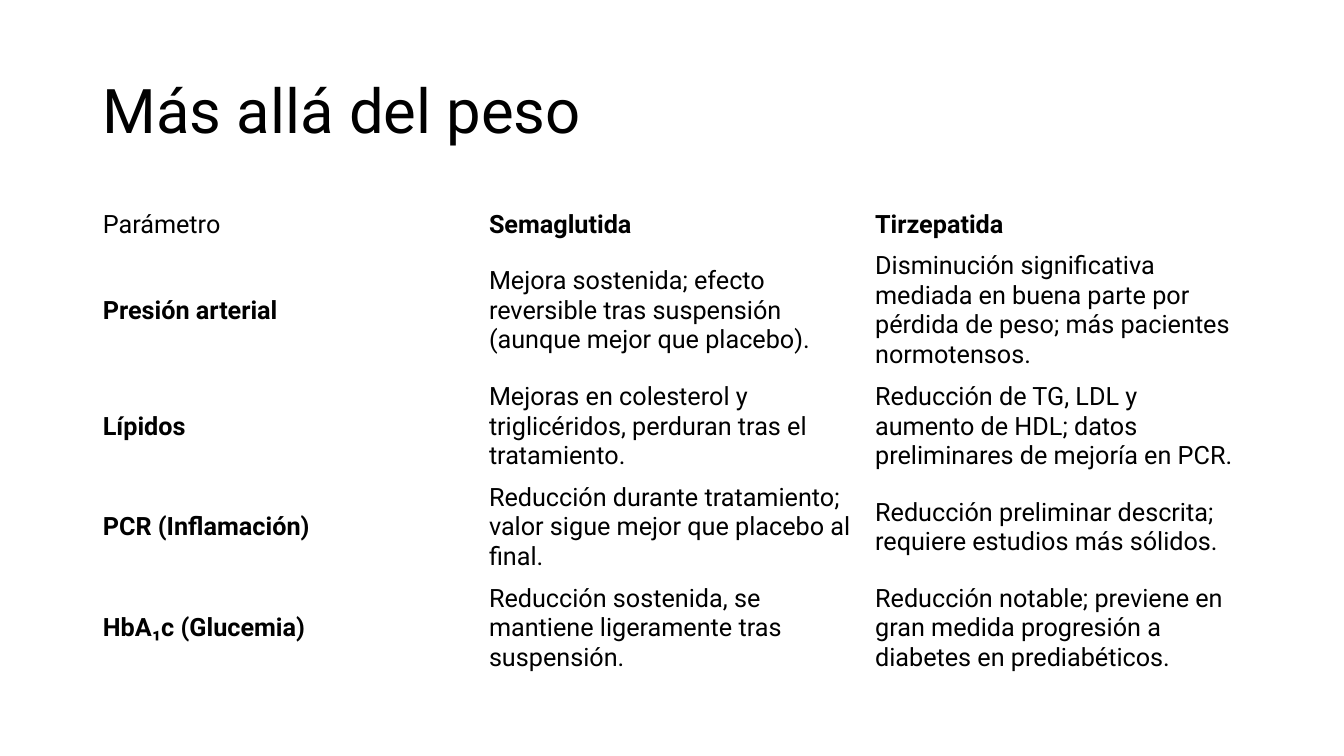
from dataclasses import dataclass

from pptx import Presentation, util as u
from pptx.dml.color import RGBColor
from pptx.enum import text


@dataclass(frozen=True)
class Theme:
    font: str = "Roboto"
    ink: RGBColor = RGBColor(0x00, 0x00, 0x00)
    paper: RGBColor = RGBColor(0xFF, 0xFF, 0xFF)
    title_size: int = 44
    table_size: int = 18
    plain_table: str = "{2D5ABB26-0587-4C30-8999-92F81FD0307C}"


class SlideBuilder:
    WIDTH, HEIGHT = 13.33, 7.5
    LEFT = 0.92
    COLUMN = 3.83
    LINE = 0.29
    CELL_PADDING = 0.1

    def __init__(self, deck, theme):
        deck.slide_width = u.Inches(self.WIDTH)
        deck.slide_height = u.Inches(self.HEIGHT)
        self.theme = theme
        self.page = deck.slides.add_slide(deck.slide_layouts[6])
        fill = self.page.background.fill
        fill.solid()
        fill.fore_color.rgb = theme.paper

    def area(self, top, height, columns):
        lengths = (self.LEFT, top, columns * self.COLUMN, height)
        return [u.Inches(length) for length in lengths]

    def style(self, para, size, bold=False):
        font = para.font
        font.name = self.theme.font
        font.size = u.Pt(size)
        font.bold = bold
        font.color.rgb = self.theme.ink

    def title(self, wording, top, height, columns):
        box = self.page.shapes.add_textbox(*self.area(top, height, columns))
        frame = box.text_frame
        frame.word_wrap = True
        frame.vertical_anchor = text.MSO_ANCHOR.MIDDLE
        para = frame.paragraphs[0]
        para.text = wording
        para.line_spacing = 0.9
        self.style(para, self.theme.title_size)

    def table(self, rows, lines_per_row, top):
        heights = [lines * self.LINE + self.CELL_PADDING for lines in lines_per_row]
        columns = len(rows[0])
        frame = self.page.shapes.add_table(
            len(rows), columns, *self.area(top, sum(heights), columns))
        table = frame.table
        table.first_row = table.horz_banding = False
        table._tbl.tblPr[0].text = self.theme.plain_table
        for column in table.columns:
            column.width = u.Inches(self.COLUMN)
        for r, (row, height) in enumerate(zip(rows, heights)):
            table.rows[r].height = u.Inches(height)
            for c, wording in enumerate(row):
                is_heading = (r == 0) != (c == 0)
                self.cell(table.cell(r, c), wording, is_heading)

    def cell(self, cell, wording, bold):
        cell.fill.background()
        cell.vertical_anchor = text.MSO_ANCHOR.MIDDLE
        para = cell.text_frame.paragraphs[0]
        para.text = wording
        self.style(para, self.theme.table_size, bold)


EFFECTS = [
    ("Parámetro", "Semaglutida", "Tirzepatida"),
    ("Presión arterial",
     "Mejora sostenida; efecto reversible tras suspensión (aunque mejor que placebo).",
     "Disminución significativa mediada en buena parte por pérdida de peso; "
     "más pacientes normotensos."),
    ("Lípidos",
     "Mejoras en colesterol y triglicéridos, perduran tras el tratamiento.",
     "Reducción de TG, LDL y aumento de HDL; datos preliminares de mejoría en PCR."),
    ("PCR (Inflamación)",
     "Reducción durante tratamiento; valor sigue mejor que placebo al final.",
     "Reducción preliminar descrita; requiere estudios más sólidos."),
    ("HbA₁c (Glucemia)",
     "Reducción sostenida, se mantiene ligeramente tras suspensión.",
     "Reducción notable; previene en gran medida progresión a diabetes en prediabéticos."),
]


def main():
    deck = Presentation()
    slide = SlideBuilder(deck, Theme())
    slide.title("Más allá del peso", top=0.4, height=1.45, columns=3)
    slide.table(EFFECTS, lines_per_row=(1, 4, 3, 3, 3), top=2.03)
    deck.save("out.pptx")


if __name__ == "__main__":
    main()
